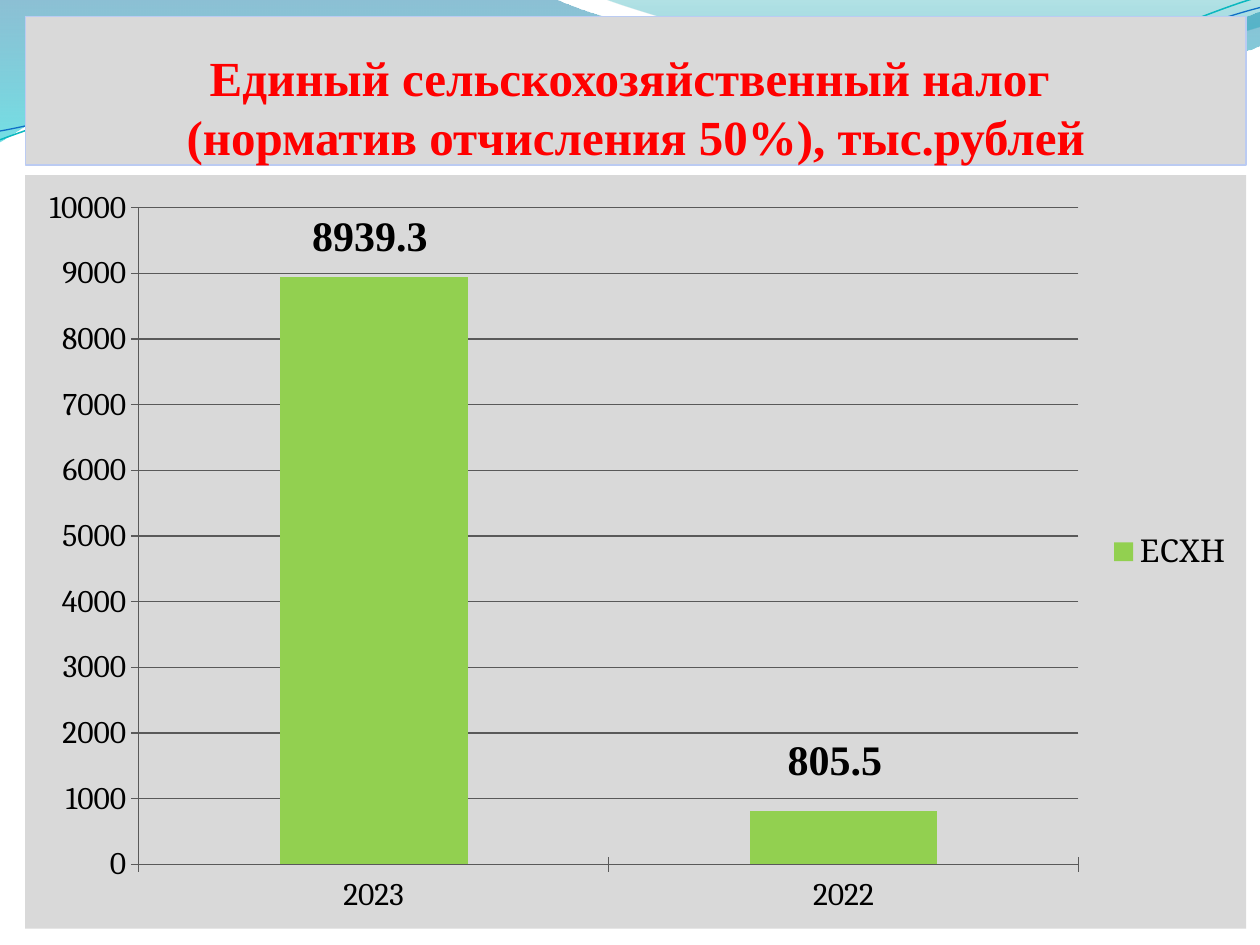
from lxml import etree
from pptx import Presentation
from pptx.chart.data import CategoryChartData
from pptx.dml.color import RGBColor
from pptx.enum.chart import XL_CHART_TYPE as ChartType, XL_LEGEND_POSITION as LegendPosition
from pptx.enum.chart import XL_TICK_MARK as TickMark
from pptx.enum.shapes import MSO_SHAPE as Shape
from pptx.enum.text import MSO_ANCHOR as Anchor, PP_ALIGN as Align
from pptx.oxml.ns import qn
from pptx.util import Inches, Pt

PANEL = RGBColor(0xD9, 0xD9, 0xD9)
PANEL_EDGE = RGBColor(0xBB, 0xCB, 0xF2)
RED = RGBColor(0xFF, 0x00, 0x00)
BLACK = RGBColor(0x00, 0x00, 0x00)
GREEN = RGBColor(0x92, 0xD0, 0x50)
GRID = RGBColor(0x59, 0x59, 0x59)
DEEP_BLUE = RGBColor(0x00, 0x74, 0xA1)
AQUA = RGBColor(0x00, 0xC6, 0xCF)
TEAL = RGBColor(0x00, 0xA1, 0xA9)
SKY = RGBColor(0x00, 0x8B, 0xBF)
TEAL_LINE = RGBColor(0x0A, 0xB8, 0xBF)
BLUE_LINE = RGBColor(0x0F, 0x6F, 0xC6)

LEFT_WAVE = [(0, 0), (4.4, -0.01), (4.76, 0.17, 6.64, 0.63, 7.58, 0.63),
             (8.53, 0.63, 9.58, 0.26, 10, 0.09), (10.01, 0.36),
             (9.83, 0.44, 8.7, 0.76, 7.46, 0.75), (6.22, 0.75, 3.82, 0.28, 2.57, 0.34),
             (1.29, 0.36, 0.46, 0.83, -0.01, 1.13), (0, 0)]
RIGHT_WAVE = [(4.79, -0.01), (5.09, 0.11, 6.82, 0.62, 7.69, 0.65),
              (8.56, 0.69, 9.61, 0.32, 10, 0.21), (10, 0), (4.79, -0.01)]
TEAL_CURVE = [(0, 1.11), (0.48, 0.93, 1.58, 0.57, 2.77, 0.52),
              (3.95, 0.47, 5.93, 0.89, 7.13, 0.8), (8.33, 0.71, 9.38, 0.15, 9.98, -0.02)]
BLUE_CURVE = [(0, 1.04), (0.47, 0.96, 1.64, 0.61, 2.83, 0.56),
              (4.03, 0.51, 5.97, 0.84, 7.17, 0.75), (8.36, 0.67, 9.41, 0.21, 10, 0.06)]


def add_outline(page, segments, close):
    points = [(Inches(segment[i]), Inches(segment[i + 1]))
              for segment in segments for i in range(0, len(segment), 2)]
    builder = page.shapes.build_freeform(*points[0])
    builder.add_line_segments(points[1:], close=close)
    outline = builder.convert_to_shape()
    outline.shadow.inherit = False
    lines = iter(list(outline._element.spPr.iter(qn("a:lnTo"))))
    for segment in segments[1:]:
        first = next(lines)
        if len(segment) == 6:
            first.tag_parts = [first, next(lines), next(lines)]
            curve = etree.Element(qn("a:cubicBezTo"))
            first.addprevious(curve)
            for part in first.tag_parts:
                curve.append(part[0])
                part.getparent().remove(part)
    return outline


def add_wave(page, segments, stops):
    wave = add_outline(page, segments, True)
    wave.line.fill.background()
    wave.fill.gradient()
    wave.fill.gradient_angle = 270
    for stop, (position, color, _) in zip(wave.fill.gradient_stops, stops):
        stop.position = position
        stop.color.rgb = color
    colors = wave._element.spPr.iter(qn("a:srgbClr"))
    for color, (_, _, opacity) in zip(colors, stops):
        etree.SubElement(color, qn("a:alpha")).set("val", str(opacity * 1000))


def add_curve(page, segments, color, width):
    curve = add_outline(page, segments, False)
    curve.fill.background()
    curve.line.color.rgb = color
    curve.line.width = Pt(width)


def add_backdrop(page):
    add_wave(page, LEFT_WAVE, [(0, DEEP_BLUE, 45), (1, AQUA, 55)])
    add_wave(page, RIGHT_WAVE, [(0, TEAL, 30), (0.8, SKY, 45)])
    add_curve(page, TEAL_CURVE, TEAL_LINE, 0.85)
    add_curve(page, BLUE_CURVE, BLUE_LINE, 0.75)


def add_title(page, left, top, width, height):
    box = page.shapes.add_shape(Shape.RECTANGLE, left, top, width, height)
    box.shadow.inherit = False
    box.fill.solid()
    box.fill.fore_color.rgb = PANEL
    box.line.color.rgb = PANEL_EDGE
    box.line.width = Pt(0.75)
    frame = box.text_frame
    frame.word_wrap = True
    frame.vertical_anchor = Anchor.BOTTOM
    frame.margin_left = frame.margin_right = frame.margin_bottom = 0
    frame.margin_top = Inches(0.05)
    para = frame.paragraphs[0]
    para.text = "Единый сельскохозяйственный налог \v(норматив отчисления 50%), тыс.рублей"
    para.alignment = Align.CENTER
    set_font(para.font, "Times New Roman", 28, RED, True)


def set_font(font, name, size, color, bold=False):
    font.name = name
    font.size = Pt(size)
    font.color.rgb = color
    font.bold = bold


def make_layout(**values):
    layout = etree.Element(qn("c:layout"))
    manual = etree.SubElement(layout, qn("c:manualLayout"))
    for name, value in values.items():
        etree.SubElement(manual, qn("c:" + name)).set("val", str(value))
    return layout


def add_tax_chart(page, left, top, width, height):
    data = CategoryChartData()
    data.categories = ["2023", "2022"]
    data.add_series("ЕСХН", [8939.3, 805.5])
    chart = page.shapes.add_chart(ChartType.COLUMN_STACKED, left, top, width, height, data).chart
    set_font(chart.font, "Cambria", 18, BLACK)
    chart.has_title = False
    chart.has_legend = True
    chart.legend.position = LegendPosition.RIGHT
    chart.legend.include_in_layout = False

    values = chart.value_axis
    values.has_major_gridlines = True
    values.major_gridlines.format.line.color.rgb = GRID
    for axis in (values, chart.category_axis):
        axis.major_tick_mark = TickMark.CROSS
        axis.format.line.color.rgb = GRID

    plot = chart.plots[0]
    plot.vary_by_categories = False
    plot.gap_width, plot.overlap = 150, 100
    series = plot.series[0]
    series.format.fill.solid()
    series.format.fill.fore_color.rgb = GREEN
    for index in range(2):
        set_font(series.points[index].data_label.font, "Times New Roman", 24, BLACK, True)
    set_font(series.data_labels.font, "Times New Roman", 24, BLACK, True)
    series.data_labels.show_value = True
    for leader in series._element.iter(qn("c:showLeaderLines")):
        leader.set("val", "0")
    shifts = [(-0.03, -2.65), (-0.07, -0.61)]
    for label, (x, y) in zip(series._element.iter(qn("c:dLbl")), shifts):
        label.insert(1, make_layout(x=Inches(x) / width, y=Inches(y) / height))

    space = chart._chartSpace
    area = space.find(".//" + qn("c:plotArea"))
    for old in area.findall(qn("c:layout")):
        area.remove(old)
    area.insert(0, make_layout(layoutTarget="inner", xMode="edge", yMode="edge",
                               x=Inches(0.9) / width, y=Inches(0.26) / height,
                               w=Inches(7.46) / width, h=Inches(5.21) / height))
    properties = etree.Element(qn("c:spPr"))
    fill = etree.SubElement(properties, qn("a:solidFill"))
    etree.SubElement(fill, qn("a:srgbClr")).set("val", str(PANEL))
    line = etree.SubElement(properties, qn("a:ln"))
    etree.SubElement(line, qn("a:noFill"))
    space.find(qn("c:chart")).addnext(properties)


def main():
    deck = Presentation()
    deck.slide_width, deck.slide_height = Inches(10), Inches(7.5)
    page = deck.slides.add_slide(deck.slide_layouts[6])
    add_backdrop(page)
    add_title(page, Inches(0.2), Inches(0.13), Inches(9.69), Inches(1.18))
    add_tax_chart(page, Inches(0.2), Inches(1.39), Inches(9.69), Inches(5.98))
    deck.save("out.pptx")


if __name__ == "__main__":
    main()
